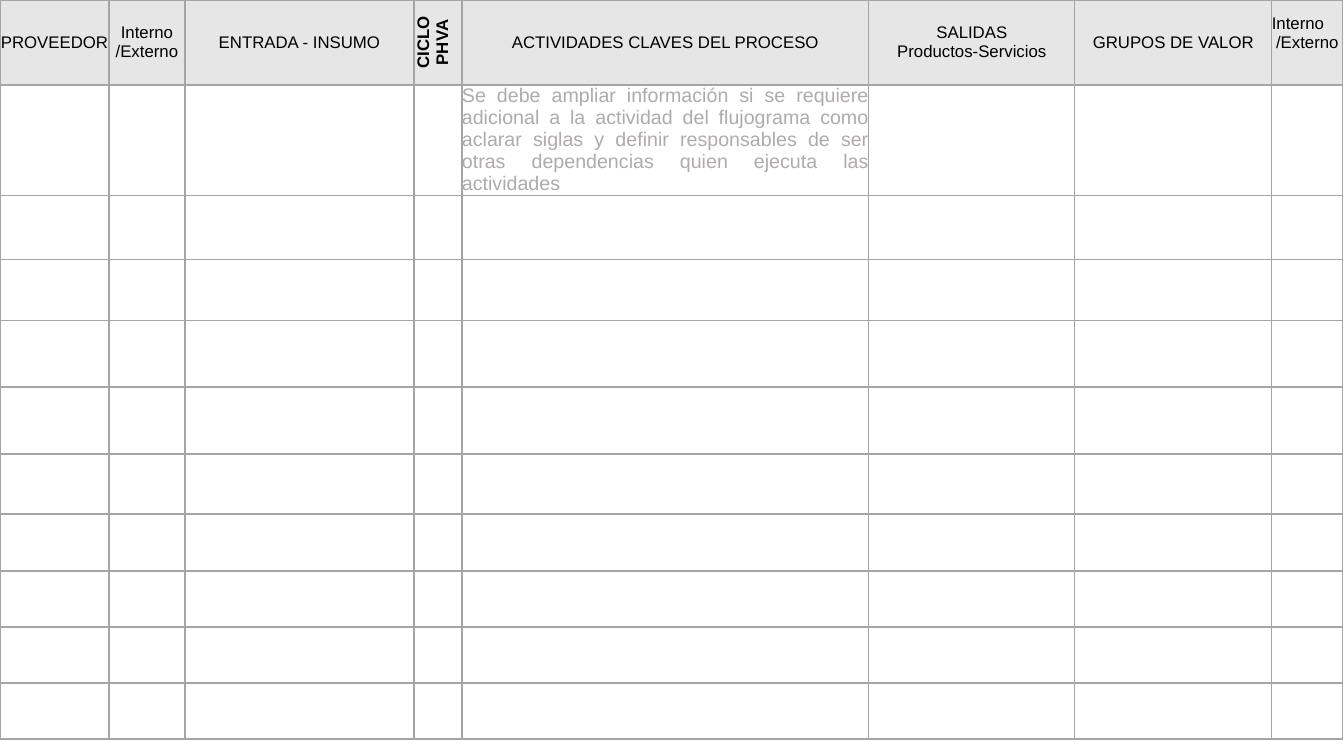
from itertools import product

from lxml.etree import SubElement
from pptx import Presentation
from pptx.dml.color import RGBColor
from pptx.enum.text import MSO_ANCHOR as ANCHOR, PP_ALIGN as ALIGN
from pptx.oxml.ns import qn
from pptx.util import Pt

BLACK = RGBColor(0x00, 0x00, 0x00)
HEADER_FILL = RGBColor(0xE7, 0xE6, 0xE6)
BORDER = RGBColor(0xA5, 0xA5, 0xA5)
HINT = RGBColor(0xAF, 0xAB, 0xAB)
FONT = "Arial"

SLIDE_W, SLIDE_H = 1344, 756
COL_WIDTHS = [109, 76, 229, 48, 407, 206, 197, 71]
ROW_HEIGHTS = [85, 110, 64, 61, 67, 67, 60, 57, 56, 56, 56]
HEADERS = [
    ["PROVEEDOR"],
    ["Interno /Externo"],
    ["ENTRADA - INSUMO"],
    ["CICLO", "PHVA"],
    ["ACTIVIDADES CLAVES DEL PROCESO"],
    ["SALIDAS", "Productos-Servicios"],
    ["GRUPOS DE VALOR"],
    ["Interno", "/Externo"],
]
CYCLE_COL, ACTIVITY_COL, LAST_COL = 3, 4, 7
ACTIVITY_HINT = (
    "Se debe ampliar información si se requiere adicional a la actividad "
    "del flujograma como aclarar siglas y definir responsables de ser otras "
    "dependencias quien ejecuta las actividades"
)


def px(n):
    return round(n * 914400 / 100.8)


def style_cell(cell, fill=None):
    cell.margin_left = cell.margin_right = 0
    cell.margin_top = cell.margin_bottom = 0
    cell.vertical_anchor = ANCHOR.MIDDLE
    tc_pr = cell._tc.get_or_add_tcPr()
    for side in ("lnL", "lnR", "lnT", "lnB"):
        ln = SubElement(tc_pr, qn(f"a:{side}"), w=str(Pt(1)))
        line_fill = SubElement(ln, qn("a:solidFill"))
        SubElement(line_fill, qn("a:srgbClr"), val=str(BORDER))
    if fill is None:
        cell.fill.background()
    else:
        cell.fill.solid()
        cell.fill.fore_color.rgb = fill


def write(cell, lines, size=12, color=BLACK, align=ALIGN.CENTER, bold=False):
    tf = cell.text_frame
    for i, line in enumerate(lines):
        p = tf.add_paragraph() if i else tf.paragraphs[0]
        p.alignment = align
        r = p.add_run()
        r.text = line
        r.font.name = FONT
        r.font.size = Pt(size)
        r.font.bold = bold
        r.font.color.rgb = color


def fill_header(table):
    for col, lines in enumerate(HEADERS):
        write(table.cell(0, col), lines, bold=col == CYCLE_COL)
    table.cell(0, CYCLE_COL)._tc.get_or_add_tcPr().set("vert", "vert270")
    last = table.cell(0, LAST_COL)
    last.margin_bottom = px(19)
    last.text_frame.paragraphs[0].alignment = ALIGN.LEFT


def add_process_table(s, x, y, col_widths, row_heights):
    shape = s.shapes.add_table(
        len(row_heights), len(col_widths),
        px(x), px(y), px(sum(col_widths)), px(sum(row_heights)),
    )
    table = shape.table
    table.first_row = table.horz_banding = False
    for col, width in zip(table.columns, col_widths):
        col.width = px(width)
    for row, height in zip(table.rows, row_heights):
        row.height = px(height)
    for row, col in product(range(len(row_heights)), range(len(col_widths))):
        style_cell(table.cell(row, col), None if row else HEADER_FILL)
    fill_header(table)
    write(table.cell(1, ACTIVITY_COL), [ACTIVITY_HINT], 14, HINT, ALIGN.JUSTIFY)


def main():
    prs = Presentation()
    prs.slide_width, prs.slide_height = px(SLIDE_W), px(SLIDE_H)
    s = prs.slides.add_slide(prs.slide_layouts[6])
    add_process_table(s, 0, 0, COL_WIDTHS, ROW_HEIGHTS)
    prs.save("out.pptx")


if __name__ == "__main__":
    main()
